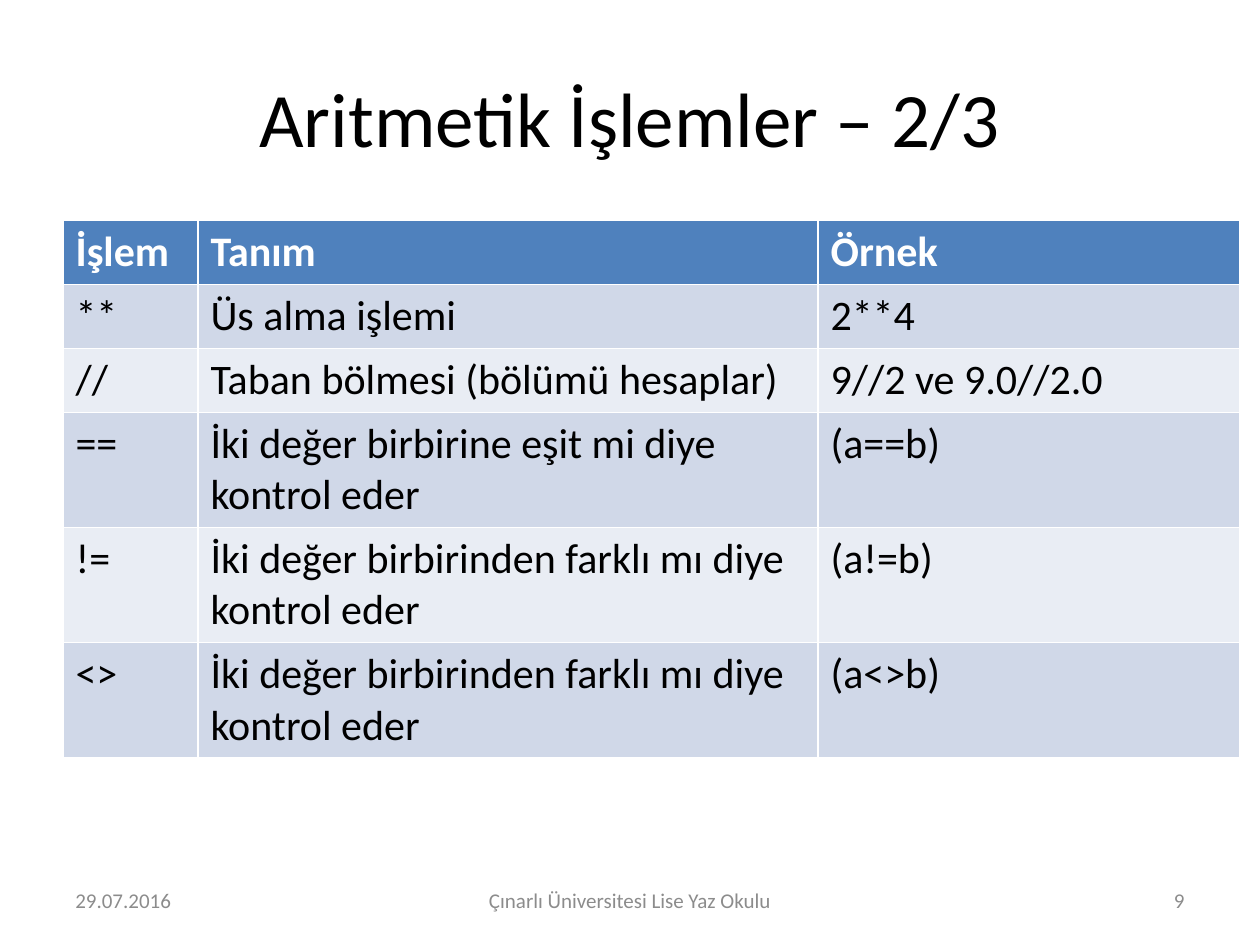
from pptx import Presentation
from pptx.dml.color import RGBColor
from pptx.enum.text import MSO_ANCHOR, PP_ALIGN
from pptx.util import Cm, Pt

TITLE = "Aritmetik İşlemler – 2/3"
OPERATIONS = [
    ("İşlem", "Tanım", "Örnek"),
    ("**", "Üs alma işlemi", "2**4"),
    ("//", "Taban bölmesi (bölümü hesaplar)", "9//2 ve 9.0//2.0"),
    ("==", "İki değer birbirine eşit mi diye kontrol eder", "(a==b)"),
    ("!=", "İki değer birbirinden farklı mı diye kontrol eder", "(a!=b)"),
    ("<>", "İki değer birbirinden farklı mı diye kontrol eder", "(a<>b)"),
]
COLUMN_WIDTHS = [2.72, 12.5, 8.51]
ROW_HEIGHT = 1.04
# text, left, width, alignment
FOOTERS = [
    ("29.07.2016", 1.27, 5.93, PP_ALIGN.LEFT),
    ("Çınarlı Üniversitesi Lise Yaz Okulu", 8.68, 8.04, PP_ALIGN.CENTER),
    ("9", 18.2, 5.93, PP_ALIGN.RIGHT),
]
MARGIN = 1.27
FONT = "Calibri"
BLACK, WHITE, GRAY = "000000", "FFFFFF", "8C8C8C"
HEADER_FILL = "4F81BD"
BAND_FILLS = ["E9EDF4", "D0D8E8"]


def color(hex_code):
    return RGBColor.from_string(hex_code)


def write(frame, text, size, hex_code, align=PP_ALIGN.LEFT, bold=False):
    paragraph = frame.paragraphs[0]
    paragraph.alignment = align
    run = paragraph.add_run()
    run.text = text
    run.font.name = FONT
    run.font.size = Pt(size)
    run.font.bold = bold
    run.font.color.rgb = color(hex_code)


def add_title(slide):
    title = slide.shapes.title
    title.left, title.top = Cm(MARGIN), Cm(0.76)
    title.width, title.height = Cm(22.86), Cm(3.18)
    title.text_frame.vertical_anchor = MSO_ANCHOR.MIDDLE
    write(title.text_frame, TITLE, 44, BLACK, PP_ALIGN.CENTER)


def add_operations(slide):
    table = slide.shapes.add_table(
        len(OPERATIONS), len(COLUMN_WIDTHS), Cm(MARGIN), Cm(4.45),
        Cm(sum(COLUMN_WIDTHS)), Cm(ROW_HEIGHT * len(OPERATIONS)),
    ).table
    for column, width in zip(table.columns, COLUMN_WIDTHS):
        column.width = Cm(width)
    for row_index, operation in enumerate(OPERATIONS):
        is_header = row_index == 0
        for column_index, text in enumerate(operation):
            cell = table.cell(row_index, column_index)
            cell.fill.solid()
            cell.fill.fore_color.rgb = color(
                HEADER_FILL if is_header else BAND_FILLS[row_index % 2])
            write(cell.text_frame, text, 24,
                  WHITE if is_header else BLACK, bold=is_header)


def add_footers(slide):
    for text, left, width, align in FOOTERS:
        footer = slide.shapes.add_textbox(Cm(left), Cm(17.65), Cm(width), Cm(1.01))
        footer.text_frame.word_wrap = True
        footer.text_frame.vertical_anchor = MSO_ANCHOR.MIDDLE
        write(footer.text_frame, text, 12, GRAY, align)


def main():
    presentation = Presentation()
    presentation.slide_width, presentation.slide_height = Cm(25.4), Cm(19.05)
    slide = presentation.slides.add_slide(presentation.slide_layouts[5])
    add_title(slide)
    add_operations(slide)
    add_footers(slide)
    presentation.save("out.pptx")


if __name__ == "__main__":
    main()
